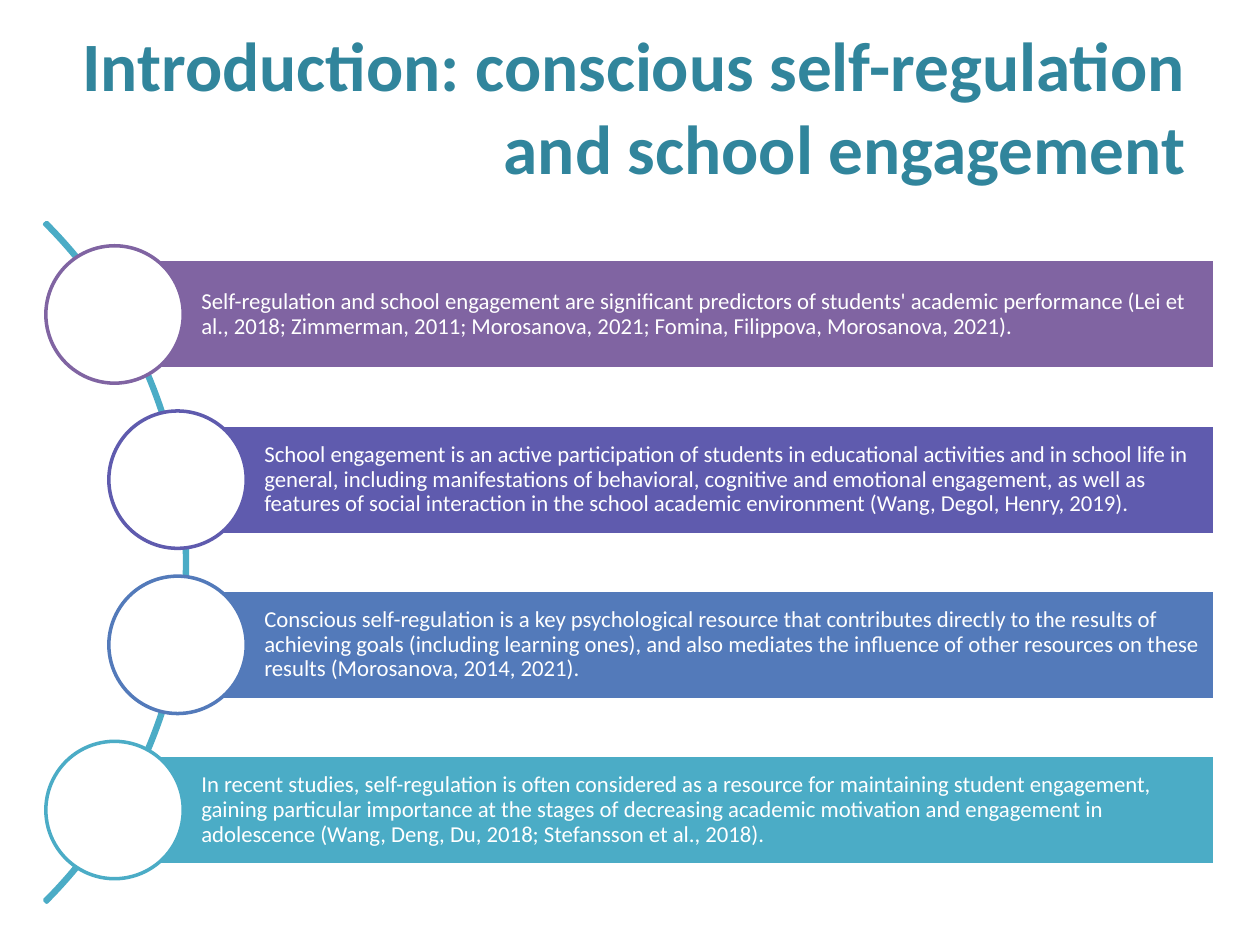
from pptx import Presentation
from pptx.dml.color import RGBColor
from pptx.enum.shapes import MSO_SHAPE
from pptx.enum.text import MSO_ANCHOR, MSO_AUTO_SIZE, PP_ALIGN
from pptx.util import Cm, Pt

RECTANGLE, OVAL, ARC = MSO_SHAPE.RECTANGLE, MSO_SHAPE.OVAL, MSO_SHAPE.BLOCK_ARC
MIDDLE, NO_FIT = MSO_ANCHOR.MIDDLE, MSO_AUTO_SIZE.NONE
LEFT, RIGHT = PP_ALIGN.LEFT, PP_ALIGN.RIGHT

TITLE = "Introduction: conscious self-regulation and school engagement"
# colour, distance of the circle's centre from the left edge (cm), text
POINTS = [
    ("8064A2", 2.31,
     "Self-regulation and school engagement are significant predictors of students' "
     "academic performance (Lei et al., 2018; Zimmerman, 2011; Morosanova, 2021; "
     "Fomina, Filippova, Morosanova, 2021)."),
    ("5F5BAE", 3.58,
     "School engagement is an active participation of students in educational "
     "activities and in school life in general, including manifestations of "
     "behavioral, cognitive and emotional engagement, as well as features of social "
     "interaction in the school academic environment (Wang, Degol, Henry, 2019)."),
    ("537ABA", 3.58,
     "Conscious self-regulation is a key psychological resource that contributes "
     "directly to the results of achieving goals (including learning ones), and also "
     "mediates the influence of other resources on these results "
     "(Morosanova, 2014, 2021)."),
    ("4BACC6", 2.31,
     "In recent studies, self-regulation is often considered as a resource for "
     "maintaining student engagement, gaining particular importance at the stages of "
     "decreasing academic motivation and engagement in adolescence "
     "(Wang, Deng, Du, 2018; Stefansson et al., 2018)."),
]

THEME = {
    "font": "Calibri", "white": "FFFFFF", "title": "31859C", "arc": "4BACC6",
    "title_size": 39.6, "body_size": 13, "line": 2,
}
FIRST_CENTRE, PITCH = 6.34, 3.33
BAR_RIGHT, BAR_HEIGHT, CIRCLE = 24.49, 2.21, 2.77
ARC_LEFT, ARC_SIZE = -15.6, 19.38
ARC_ADJUSTMENTS = (189, 27, 0.003)  # start angle, end angle, thickness


def add_plain_shape(page, kind, left, top, width, height, fill, line):
    shape = page.shapes.add_shape(kind, Cm(left), Cm(top), Cm(width), Cm(height))
    shape.shadow.inherit = False
    if fill:
        shape.fill.solid()
        shape.fill.fore_color.rgb = RGBColor.from_string(fill)
    else:
        shape.fill.background()
    shape.line.color.rgb = RGBColor.from_string(line)
    shape.line.width = Pt(THEME["line"])
    return shape


def write_text(shape, text, colour, size, align, frame_format, bold=False, spacing=None):
    frame = shape.text_frame
    frame_format = {"word_wrap": True, "auto_size": NO_FIT,
                    "vertical_anchor": MIDDLE, **frame_format}
    for name, value in frame_format.items():
        setattr(frame, name, value)
    para = frame.paragraphs[0]
    para.alignment = align
    para.line_spacing = spacing
    span = para.add_run()
    span.text = text
    font_format = {"name": THEME["font"], "size": Pt(size), "bold": bold}
    for name, value in font_format.items():
        setattr(span.font, name, value)
    span.font.color.rgb = RGBColor.from_string(colour)


def add_point(page, centre_x, centre_y, colour, text):
    """Add one bar with its text and the circle over the bar's left end."""
    bar = add_plain_shape(page, RECTANGLE, centre_x, centre_y - BAR_HEIGHT / 2,
                          BAR_RIGHT - centre_x, BAR_HEIGHT, colour, THEME["white"])
    insets = {"margin_left": Cm(1.75), "margin_right": Cm(0.1),
              "margin_top": Cm(0.1), "margin_bottom": Cm(0.1)}
    write_text(bar, text, THEME["white"], THEME["body_size"], LEFT, insets, spacing=0.9)
    add_plain_shape(page, OVAL, centre_x - CIRCLE / 2, centre_y - CIRCLE / 2,
                    CIRCLE, CIRCLE, THEME["white"], colour)


def main():
    deck = Presentation()
    deck.slide_width, deck.slide_height = Cm(25.4), Cm(19.05)
    page = deck.slides.add_slide(deck.slide_layouts[5])

    title = page.shapes.title
    place = {"left": 1.3, "top": 0.53, "width": 22.86, "height": 3.18}
    for name, value in place.items():
        setattr(title, name, Cm(value))
    write_text(title, TITLE, THEME["title"], THEME["title_size"], RIGHT, {}, bold=True)

    middle = FIRST_CENTRE + PITCH * (len(POINTS) - 1) / 2
    arc = add_plain_shape(page, ARC, ARC_LEFT, middle - ARC_SIZE / 2,
                          ARC_SIZE, ARC_SIZE, None, THEME["arc"])
    for index, value in enumerate(ARC_ADJUSTMENTS):
        arc.adjustments[index] = value

    for row, (colour, centre_x, text) in enumerate(POINTS):
        add_point(page, centre_x, FIRST_CENTRE + row * PITCH, colour, text)

    deck.save("out.pptx")


if __name__ == "__main__":
    main()
